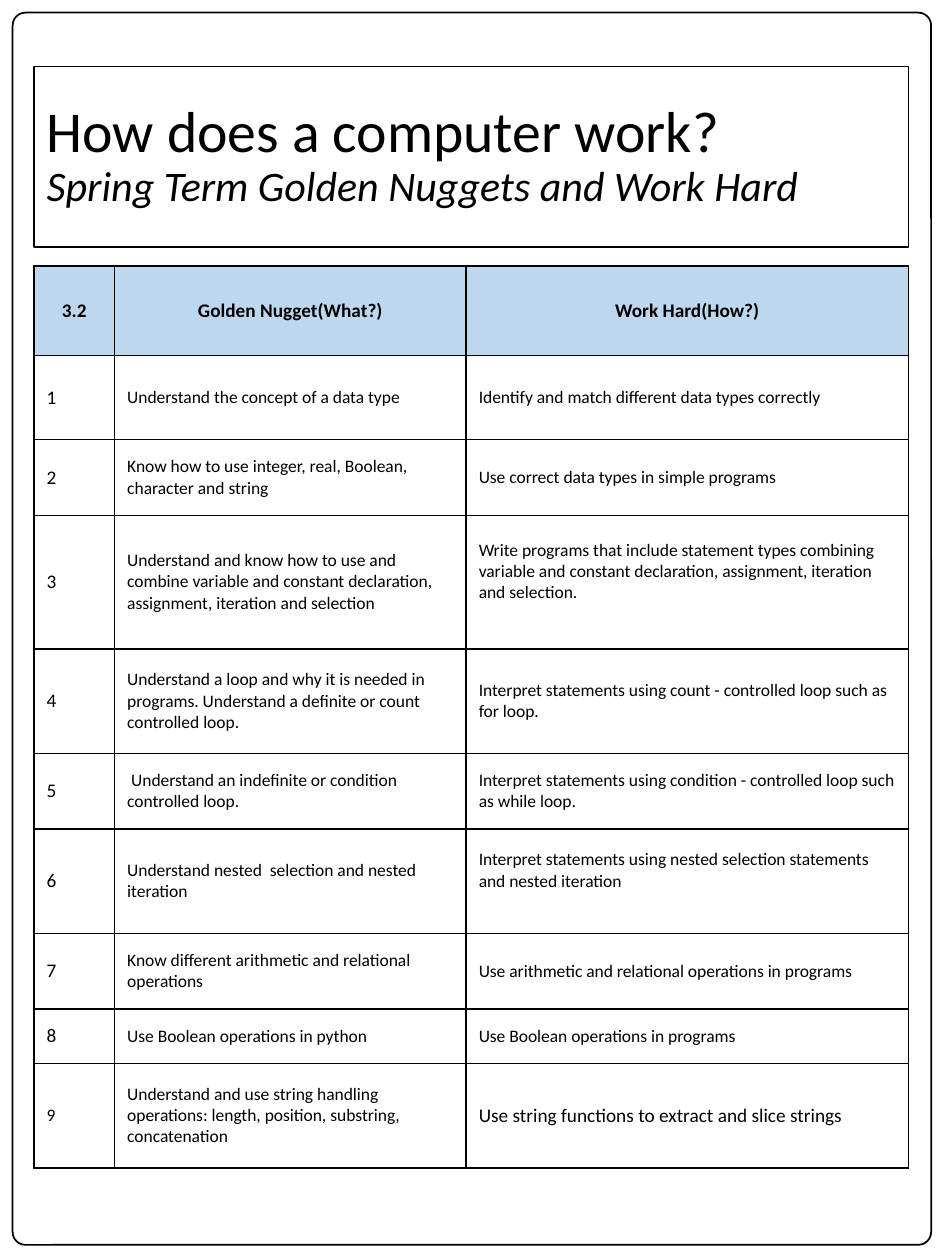
from lxml import etree
from pptx import Presentation
from pptx import util as u
from pptx.dml.color import RGBColor
from pptx.enum import shapes, text
from pptx.oxml.ns import qn

COLORS = {"ink": "000000", "header": "BDD7EE"}
INK = RGBColor.from_string(COLORS["ink"])

prs = Presentation()
prs.slide_width, prs.slide_height = u.Inches(7.5), u.Inches(10)
W, H = prs.slide_width, prs.slide_height
LEFT, WIDTH = int(W * 0.036), int(W * 0.9253)
s = prs.slides.add_slide(prs.slide_layouts[5])


def add_run(p, words, **fmt):
    r = p.add_run()
    r.text = words
    r.font.name = "Calibri"
    r.font.color.rgb = INK
    for name, value in fmt.items():
        setattr(r.font, name, value)


def add_borders(cell):
    tcPr = cell._tc.get_or_add_tcPr()
    for i, side in enumerate(("lnL", "lnR", "lnT", "lnB")):
        ln = etree.Element(qn("a:" + side), w=str(u.Pt(1)))
        fill = etree.SubElement(ln, qn("a:solidFill"))
        etree.SubElement(fill, qn("a:srgbClr"), val=COLORS["ink"])
        tcPr.insert(i, ln)


# Title box
title = s.shapes.title
box = {"left": LEFT, "top": int(H * 0.053), "width": WIDTH, "height": int(H * 0.143)}
for name, value in box.items():
    setattr(title, name, value)
title.line.color.rgb = INK
title.line.width = u.Pt(0.75)
tf = title.text_frame
tf.auto_size = text.MSO_AUTO_SIZE.NONE
tf.vertical_anchor = text.MSO_ANCHOR.MIDDLE
p = tf.paragraphs[0]
p.alignment = text.PP_ALIGN.LEFT
p.line_spacing = 0.9
add_run(p, "How does a computer work?", size=u.Pt(33))
p.add_line_break()
add_run(p, "Spring Term Golden Nuggets and Work Hard", size=u.Pt(24), italic=True)

# Table content: row height as a share of the slide, golden nugget, work hard
ROWS = [
    (0.071, "Golden Nugget(What?)", "Work Hard(How?)"),
    (0.067, "Understand the concept of a data type",
     "Identify and match different data types correctly"),
    (0.06, "Know how to use integer, real, Boolean, character and string",
     "Use correct data types in simple programs"),
    (0.106, "Understand and know how to use and combine variable and constant declaration, "
     "assignment, iteration and selection",
     "Write programs that include statement types combining variable and constant "
     "declaration, assignment, iteration and selection."),
    (0.083, "Understand a loop and why it is needed in programs. Understand a definite or "
     "count controlled loop.",
     "Interpret statements using count - controlled loop such as for loop."),
    (0.06, " Understand an indefinite or condition controlled loop.",
     "Interpret statements using condition - controlled loop such as while loop."),
    (0.083, "Understand nested  selection and nested iteration",
     "Interpret statements using nested selection statements and nested iteration"),
    (0.06, "Know different arithmetic and relational operations",
     "Use arithmetic and relational operations in programs"),
    (0.043, "Use Boolean operations in python", "Use Boolean operations in programs"),
    (0.083, "Understand and use string handling operations: length, position, substring, "
     "concatenation",
     "Use string functions to extract and slice strings"),
]
RAISED = {(3, 2), (6, 2)}  # cells whose text sits above the middle

# Table
table_height = int(H * sum(row[0] for row in ROWS))
table = s.shapes.add_table(len(ROWS), 3, LEFT, int(H * 0.211), WIDTH, table_height).table
table.first_row = table.horz_banding = False
for column, inches in zip(table.columns, (0.64, 2.79, 3.51)):
    column.width = u.Inches(inches)

for i, (share, nugget, work) in enumerate(ROWS):
    table.rows[i].height = int(H * share)
    for j, words in enumerate((str(i) if i else "3.2", nugget, work)):
        cell = table.cell(i, j)
        cell.vertical_anchor = text.MSO_ANCHOR.MIDDLE
        if (i, j) in RAISED:
            cell.margin_bottom = u.Inches(0.22)
        p = cell.text_frame.paragraphs[0]
        if i == 0:
            p.alignment = text.PP_ALIGN.CENTER
            cell.fill.solid()
            cell.fill.fore_color.rgb = RGBColor.from_string(COLORS["header"])
        else:
            cell.fill.background()
        # Header and row numbers are larger; the last row swaps the sizes
        large = i == 0 or (j == 2 if i == 9 else j == 0)
        add_run(p, words, size=u.Pt(11 if large else 10), bold=i == 0)
        add_borders(cell)

# Page frame
frame = s.shapes.add_shape(shapes.MSO_SHAPE.ROUNDED_RECTANGLE, u.Inches(0.1), u.Inches(0.1),
                           int(W * 0.972), int(H * 0.978))
frame.adjustments[0] = 0.014
frame.shadow.inherit = False
frame.fill.background()
frame.line.color.rgb = INK
frame.line.width = u.Pt(1)

prs.save("out.pptx")
